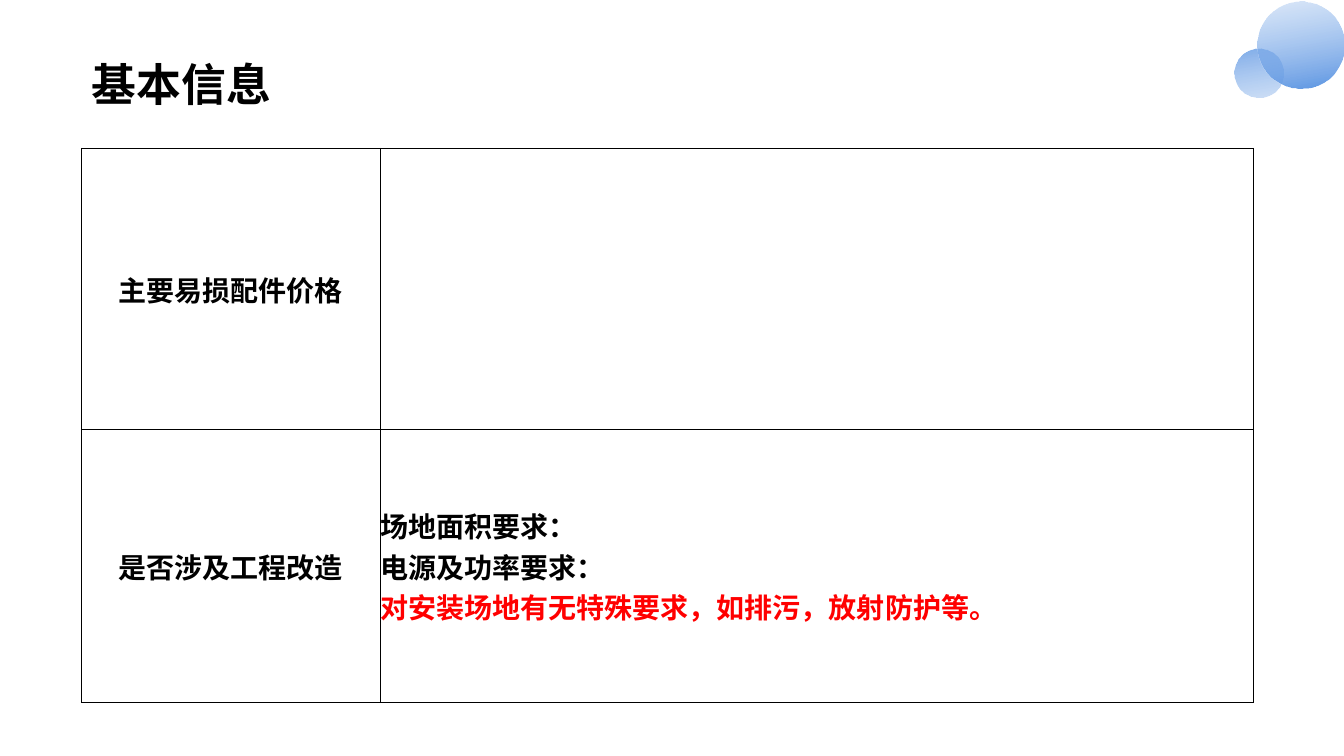
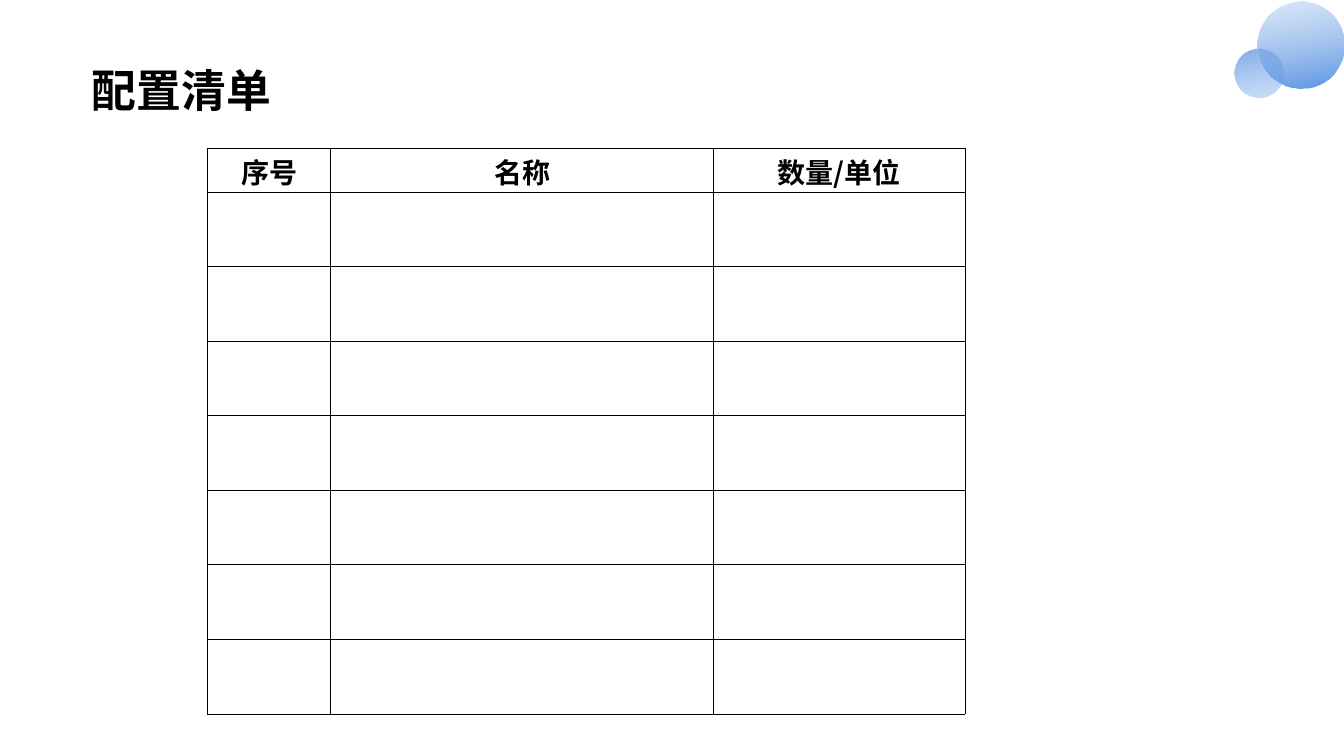
from lxml import etree
from pptx import Presentation
from pptx import util as u
from pptx.dml.color import RGBColor
from pptx.enum import shapes, text
from pptx.oxml.ns import qn

FONT = "Noto Sans CJK SC"
COLORS = {
    "ink": "000000",
    "alert": "FF0000",
    "paper": "FFFFFF",
    "pale": "ADCAF1",
    "mid": "77A7E8",
    "deep": "4D8CE1",
}
TITLE_LEFT, TITLE_HEIGHT = 0.81, 0.64
TABLE_TOP = 1.47


def rgb(name):
    """Return the palette colour with this name."""
    return RGBColor.from_string(COLORS[name])


def write(para, words, size=20, color="ink", align=text.PP_ALIGN.LEFT):
    """Add bold text to a paragraph in the shared font."""
    para.alignment = align
    span = para.add_run()
    span.text = words
    span.font.size = u.Pt(size)
    span.font.bold = True
    span.font.name = FONT
    span.font.color.rgb = rgb(color)
    east_asian = etree.SubElement(span.font._element, qn("a:ea"))
    east_asian.set("typeface", FONT)


def add_bubble(group, left, top, size, end_color, alpha, flipped=False):
    """Add a tilted circle that fades from translucent pale to end_color."""
    bubble = group.shapes.add_shape(
        shapes.MSO_SHAPE.OVAL, *map(u.Inches, (left, top, size, size)))
    bubble.shadow.inherit = False
    bubble.line.fill.background()
    bubble.rotation = 35
    bubble.fill.gradient()
    bubble.fill.gradient_angle = 315
    for stop, color in zip(bubble.fill.gradient_stops, ("pale", end_color)):
        stop.color.rgb = rgb(color)
    pale_stop = next(bubble.element.spPr.iter(qn("a:srgbClr")))
    etree.SubElement(pale_stop, qn("a:alpha")).set("val", str(alpha * 1000))
    if flipped:
        frame = bubble.element.spPr.find(qn("a:xfrm"))
        frame.set("flipH", "1")
        frame.set("flipV", "1")


def add_corner(page, left=12.24, top=0.02):
    """Place the pair of overlapping circles in the upper right corner."""
    group = page.shapes.add_group_shape()
    add_bubble(group, left, top + 0.46, 0.49, "mid", 55, flipped=True)
    add_bubble(group, left + 0.23, top, 0.86, "deep", 39)


def add_page(deck, title, top, width):
    """Add a slide with the corner circles and its title."""
    page = deck.slides.add_slide(deck.slide_layouts[5])
    add_corner(page)
    box = page.shapes.title
    box.left, box.top = u.Inches(TITLE_LEFT), u.Inches(top)
    box.width, box.height = u.Inches(width), u.Inches(TITLE_HEIGHT)
    frame = box.text_frame
    frame.word_wrap = True
    frame.auto_size = text.MSO_AUTO_SIZE.NONE
    frame.vertical_anchor = text.MSO_ANCHOR.MIDDLE
    frame.margin_top = frame.margin_bottom = 0
    write(frame.paragraphs[0], title, size=32)
    return page


def style_cell(cell):
    """Give a cell thin borders on all sides and a plain fill."""
    properties = cell._tc.get_or_add_tcPr()
    for side in ("L", "R", "T", "B"):
        line = etree.SubElement(properties, qn(f"a:ln{side}"))
        line.set("w", str(u.Pt(0.5)))
        fill = etree.SubElement(line, qn("a:solidFill"))
        etree.SubElement(fill, qn("a:srgbClr")).set("val", COLORS["ink"])
    cell.fill.solid()
    cell.fill.fore_color.rgb = rgb("paper")


def add_grid(page, left, top, widths, heights):
    """Add a plain bordered table with the given column and row sizes."""
    box = [u.Inches(n) for n in (left, top, sum(widths), sum(heights))]
    table = page.shapes.add_table(len(heights), len(widths), *box).table
    table.first_row = table.horz_banding = False
    for column, width in zip(table.columns, widths):
        column.width = u.Inches(width)
    for row, height in zip(table.rows, heights):
        row.height = u.Inches(height)
    for cell in table.iter_cells():
        style_cell(cell)
    return table


def fill_cell(cell, lines, align, anchor, margin_top=0):
    """Write (words, color) lines into a cell, one paragraph each."""
    cell.margin_left = cell.margin_right = cell.margin_bottom = 0
    cell.margin_top = u.Inches(margin_top)
    cell.vertical_anchor = anchor
    frame = cell.text_frame
    for index, (words, color) in enumerate(lines):
        para = frame.add_paragraph() if index else frame.paragraphs[0]
        write(para, words, color=color, align=align)


def basic_info(deck):
    """Build the slide on part prices and site requirements."""
    page = add_page(deck, "基本信息", top=0.51, width=4.33)
    table = add_grid(page, TITLE_LEFT, TABLE_TOP, (2.96, 8.66), (2.79, 2.71))
    middle = text.MSO_ANCHOR.MIDDLE
    for row, label in enumerate(("主要易损配件价格", "是否涉及工程改造")):
        fill_cell(table.cell(row, 0), [(label, "ink")],
                  text.PP_ALIGN.CENTER, middle)
    requirements = [
        ("场地面积要求：", "ink"),
        ("电源及功率要求：", "ink"),
        ("对安装场地有无特殊要求，如排污，放射防护等。", "alert"),
    ]
    fill_cell(table.cell(1, 1), requirements, text.PP_ALIGN.LEFT, middle)


def parts_list(deck):
    """Build the slide with the empty configuration list."""
    page = add_page(deck, "配置清单", top=0.57, width=5.11)
    heights = [0.43] + [0.74] * 7
    table = add_grid(page, 2.06, TABLE_TOP, (1.22, 3.8, 2.49), heights)
    for column, label in enumerate(("序号", "名称", "数量/单位")):
        fill_cell(table.cell(0, column), [(label, "ink")],
                  text.PP_ALIGN.CENTER, text.MSO_ANCHOR.TOP, margin_top=0.03)


def main():
    """Build and save the deck."""
    deck = Presentation()
    deck.slide_width, deck.slide_height = u.Inches(13.33), u.Inches(7.5)
    basic_info(deck)
    parts_list(deck)
    deck.save("out.pptx")


if __name__ == "__main__":
    main()
